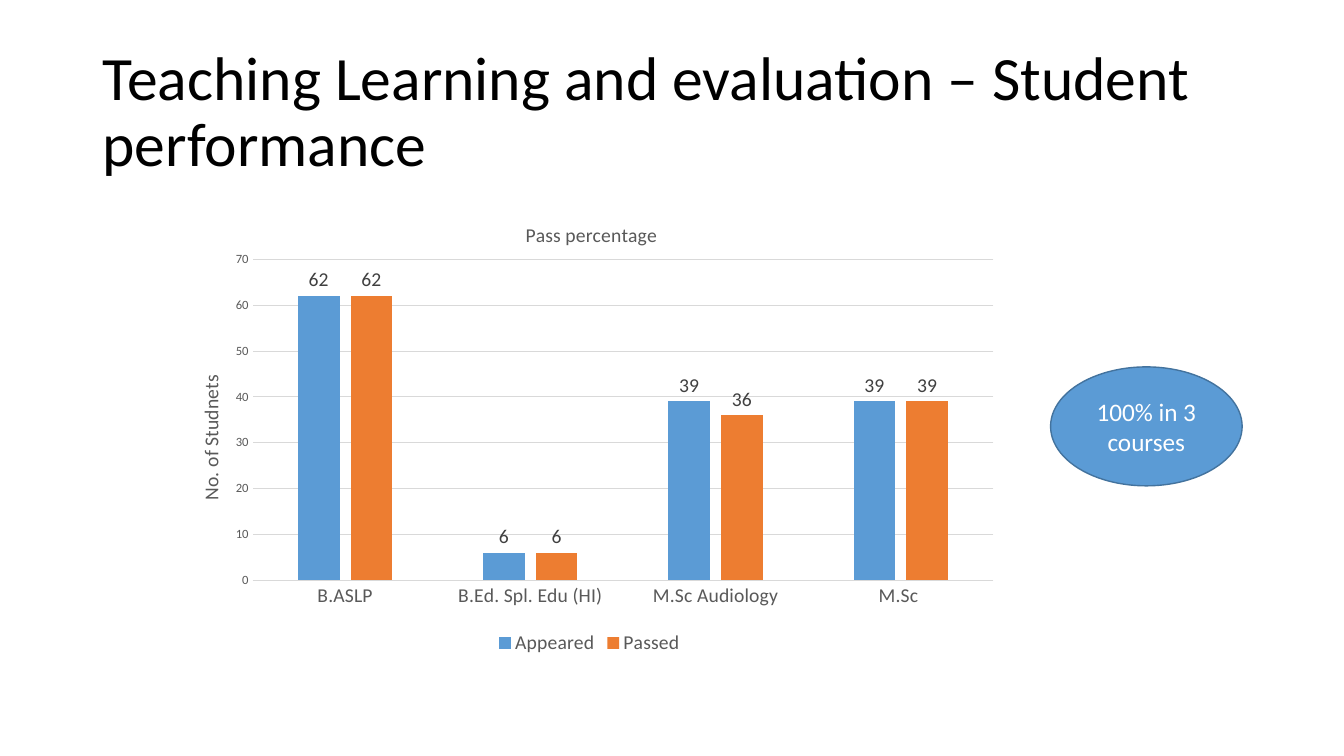
from lxml import etree
from pptx import Presentation
from pptx.chart.data import CategoryChartData
from pptx.dml.color import RGBColor
from pptx.enum.chart import XL_CHART_TYPE, XL_LABEL_POSITION, XL_LEGEND_POSITION, XL_TICK_MARK
from pptx.enum.shapes import MSO_SHAPE
from pptx.enum.text import MSO_ANCHOR, PP_ALIGN
from pptx.oxml.ns import qn
from pptx.util import Inches, Pt

COLUMNS = XL_CHART_TYPE.COLUMN_CLUSTERED
OUTSIDE = XL_LABEL_POSITION.OUTSIDE_END
BOTTOM = XL_LEGEND_POSITION.BOTTOM
NO_TICK = XL_TICK_MARK.NONE
ELLIPSE = MSO_SHAPE.OVAL
MIDDLE = MSO_ANCHOR.MIDDLE
CENTER = PP_ALIGN.CENTER

BLACK = RGBColor(0x00, 0x00, 0x00)
WHITE = RGBColor(0xFF, 0xFF, 0xFF)
GREY = RGBColor(0x59, 0x59, 0x59)
DARK_GREY = RGBColor(0x40, 0x40, 0x40)
LIGHT_GREY = RGBColor(0xD9, 0xD9, 0xD9)
BLUE = RGBColor(0x5B, 0x9B, 0xD5)
DARK_BLUE = RGBColor(0x43, 0x73, 0x9E)
ORANGE = RGBColor(0xED, 0x7D, 0x31)


class SlideBuilder:
    font_name = "Calibri"

    def __init__(self, s):
        self.s = s

    def style(self, font, size, color):
        font.name = self.font_name
        font.size = Pt(size)
        font.bold = False
        font.color.rgb = color

    def set_text(self, tf, text, size, color):
        tf.word_wrap = True
        tf.vertical_anchor = MIDDLE
        p = tf.paragraphs[0]
        p.text = text
        self.style(p.font, size, color)
        return p

    def title(self, text, x, y, w, h):
        box = self.s.shapes.add_textbox(Inches(x), Inches(y), Inches(w), Inches(h))
        self.set_text(box.text_frame, text, 44, BLACK).line_spacing = 0.9

    def ellipse(self, text, x, y, w, h):
        sp = self.s.shapes.add_shape(ELLIPSE, Inches(x), Inches(y), Inches(w), Inches(h))
        sp.shadow.inherit = False
        sp.fill.solid()
        sp.fill.fore_color.rgb = BLUE
        sp.line.color.rgb = DARK_BLUE
        sp.line.width = Pt(1)
        self.set_text(sp.text_frame, text, 18, WHITE).alignment = CENTER

    def place(self, part, index, **fractions):
        """Set a chart part's position as fractions of the chart area."""
        for old in part.findall(qn("c:layout")):
            part.remove(old)
        layout = etree.Element(qn("c:layout"))
        part.insert(index, layout)
        manual = etree.SubElement(layout, qn("c:manualLayout"))
        if "w" in fractions:
            etree.SubElement(manual, qn("c:layoutTarget")).set("val", "inner")
        for key in ("x", "y"):
            etree.SubElement(manual, qn(f"c:{key}Mode")).set("val", "edge")
        for key, value in fractions.items():
            etree.SubElement(manual, qn(f"c:{key}")).set("val", str(value))

    def chart_title(self, title, text, x, y):
        p = title.text_frame.paragraphs[0]
        p.text = text
        self.style(p.font, 14, GREY)
        self.place(title._element, 1, x=x, y=y)

    def axis(self, axis, size):
        axis.major_tick_mark = axis.minor_tick_mark = NO_TICK
        self.style(axis.tick_labels.font, size, GREY)

    def column_chart(self, title, value_title, cats, series, x, y, w, h):
        data = CategoryChartData()
        data.categories = cats
        for name, values, _ in series:
            data.add_series(name, values)
        chart = self.s.shapes.add_chart(
            COLUMNS, Inches(x), Inches(y), Inches(w), Inches(h), data).chart
        self.style(chart.font, 10, BLACK)

        # Axes and gridlines
        cat_axis, val_axis = chart.category_axis, chart.value_axis
        self.axis(cat_axis, 14)
        cat_axis.format.line.color.rgb = LIGHT_GREY
        cat_axis.format.line.width = Pt(0.75)
        self.axis(val_axis, 9)
        val_axis.format.line.fill.background()
        val_axis.minimum_scale, val_axis.maximum_scale = 0, 70
        val_axis.major_unit = 10
        grid = val_axis.major_gridlines.format.line
        grid.color.rgb = LIGHT_GREY
        grid.width = Pt(0.75)

        # Columns and value labels
        plot = chart.plots[0]
        plot.vary_by_categories = False
        plot.gap_width, plot.overlap = 219, -27
        for column, (_, _, color) in zip(plot.series, series):
            column.format.fill.solid()
            column.format.fill.fore_color.rgb = color
            labels = column.data_labels
            labels.show_value = True
            labels.position = OUTSIDE
            self.style(labels.font, 14, DARK_GREY)

        # Titles, legend and plot area
        self.chart_title(chart.chart_title, title, 0.42, 0.05)
        self.chart_title(val_axis.axis_title, value_title, 0.03, 0.38)
        chart.has_legend = True
        chart.legend.position = BOTTOM
        chart.legend.include_in_layout = False
        self.style(chart.legend.font, 14, GREY)
        plot_area = chart._chartSpace.find(".//" + qn("c:plotArea"))
        self.place(plot_area, 0, x=0.1, y=0.14, w=0.88, h=0.69)


def main():
    prs = Presentation()
    prs.slide_width, prs.slide_height = Inches(13.33), Inches(7.5)
    slide = SlideBuilder(prs.slides.add_slide(prs.slide_layouts[6]))

    # Heading
    slide.title("Teaching Learning and evaluation – Student performance", 0.92, 0.4, 11.5, 1.45)

    # Student results
    slide.column_chart(
        "Pass percentage", "No. of Studnets",
        ["B.ASLP", "B.Ed. Spl. Edu (HI)", "M.Sc Audiology", "M.Sc "],
        [("Appeared", (62, 6, 39, 39), BLUE), ("Passed", (62, 6, 36, 39), ORANGE)],
        1.67, 1.93, 8.35, 4.61)

    # Callout
    slide.ellipse("100% in 3 courses", 10.42, 3.64, 1.9, 1.18)

    prs.save("out.pptx")


if __name__ == "__main__":
    main()
